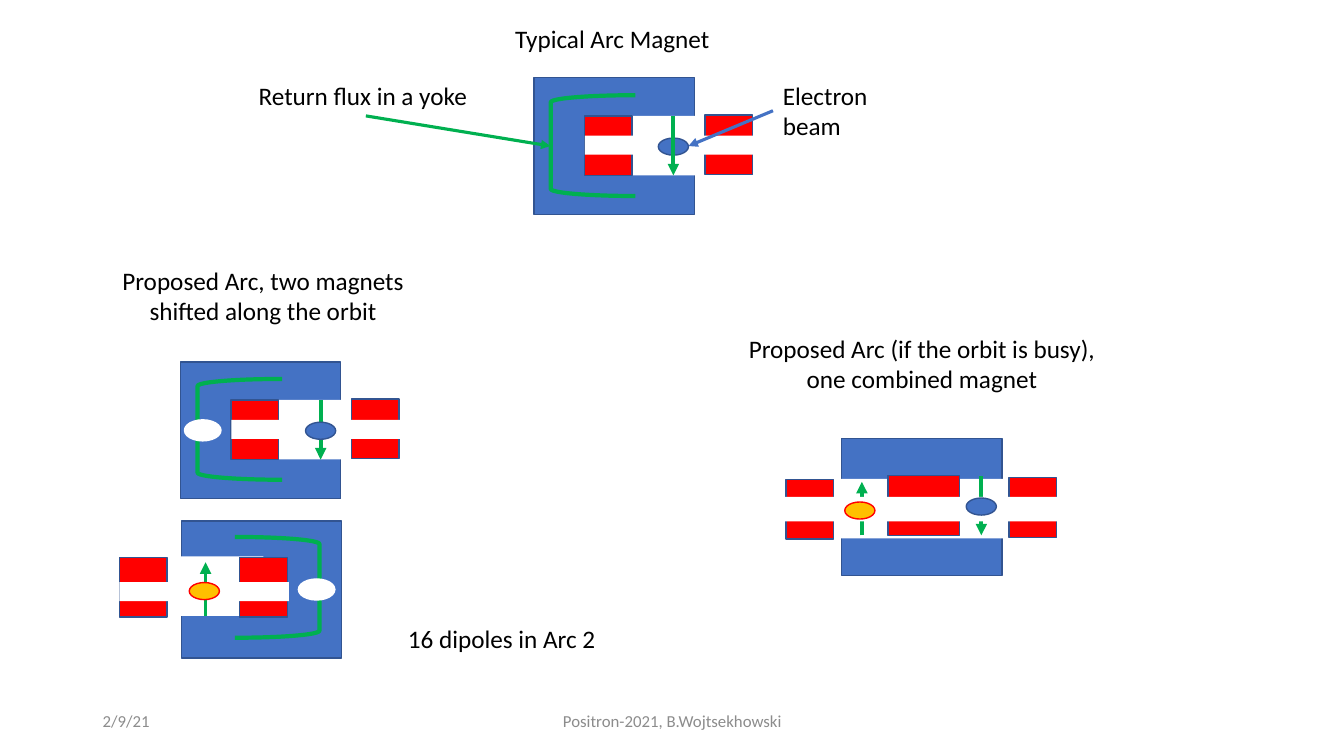
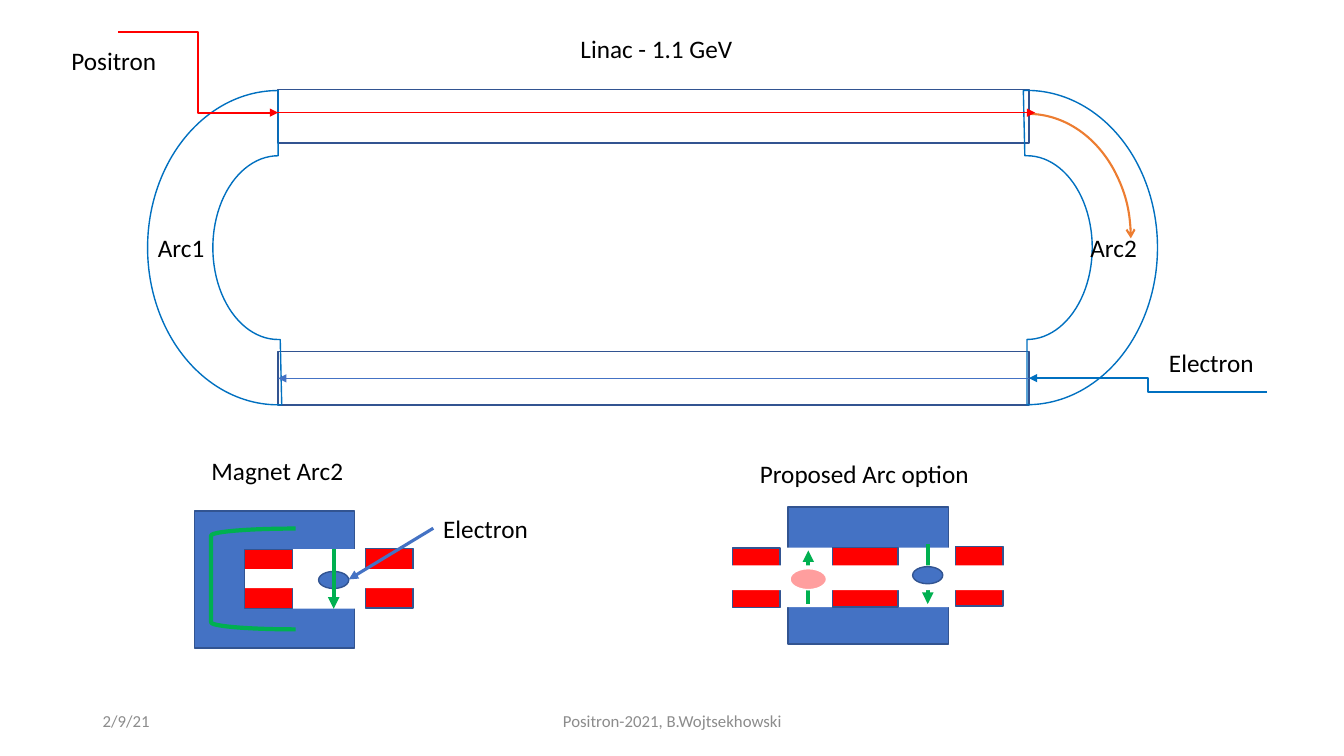
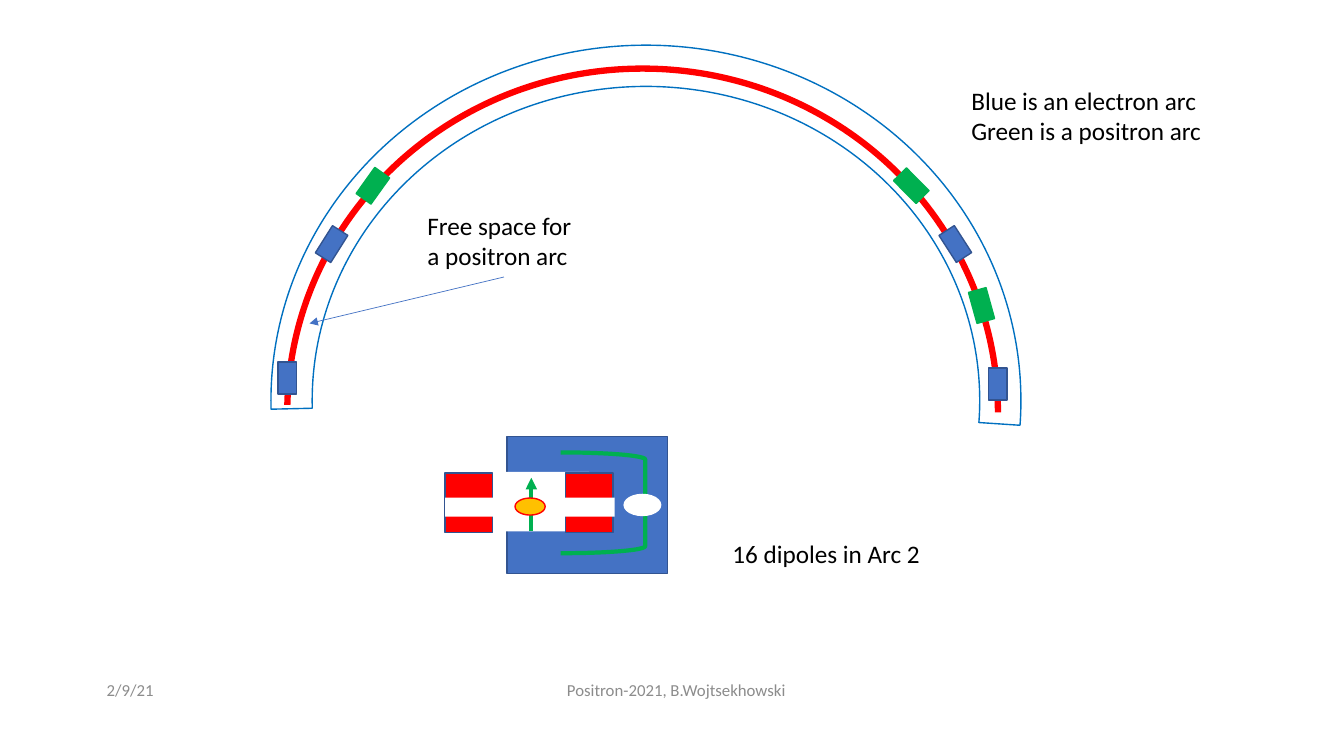
import pptx
import pptx.dml.color
import pptx.enum.shapes
import pptx.enum.text
import pptx.oxml.ns
import pptx.util
from lxml import etree

Cm = pptx.util.Cm
Pt = pptx.util.Pt
qn = pptx.oxml.ns.qn
MSO = pptx.enum.shapes.MSO_SHAPE
LINK = pptx.enum.shapes.MSO_CONNECTOR
LEFT = pptx.enum.text.PP_ALIGN.LEFT
CENTER = pptx.enum.text.PP_ALIGN.CENTER

FONT = "Calibri"
COLORS = {
    "blue": "4472C4",
    "navy": "325491",
    "pipe": "0070C0",
    "red": "FF0000",
    "green": "00B050",
    "gold": "FFC000",
    "orange": "ED7D31",
    "white": "FFFFFF",
    "black": "000000",
    "gray": "8C8C8C",
}
RGB = {name: pptx.dml.color.RGBColor.from_string(c) for name, c in COLORS.items()}


def stroke(sp, color, width, tail=None):
    if color:
        sp.line.color.rgb = RGB[color]
        sp.line.width = Pt(width)
    else:
        sp.line.fill.background()
    spPr = sp._element.spPr
    if tail:
        etree.SubElement(spPr.find(qn("a:ln")), qn("a:tailEnd"), type=tail)
    etree.SubElement(spPr, qn("a:effectLst"))
    return sp


def draw(s, geometry, x, y, w, h, fill, line, width=1, rot=0, adj=(), tail=None):
    sp = s.shapes.add_shape(geometry, Cm(x), Cm(y), Cm(w), Cm(h))
    sp.rotation = rot
    for i, value in enumerate(adj):
        sp.adjustments[i] = value
    if fill:
        sp.fill.solid()
        sp.fill.fore_color.rgb = RGB[fill]
    else:
        sp.fill.background()
    return stroke(sp, line, width, tail)


prs = pptx.Presentation()
prs.slide_width = Cm(33.87)
prs.slide_height = Cm(19.05)
slides = [prs.slides.add_slide(prs.slide_layouts[6]) for _ in range(3)]
magnets_slide, ring_slide, arc_slide = slides

PARTS = {
    "yoke": (MSO.RECTANGLE, 4.04, 3.45, "blue", "navy"),
    "gap": (MSO.RECTANGLE, 3.76, 1.5, "white", None),
    "wide gap": (MSO.RECTANGLE, 5.03, 1.5, "white", None),
    "coil": (MSO.RECTANGLE, 1.2, 1.5, "red", "navy"),
    "wide core": (MSO.RECTANGLE, 1.8, 1.5, "red", "navy"),
    "core": (MSO.RECTANGLE, 1.65, 1.5, "red", "navy"),
    "slit": (MSO.RECTANGLE, 4.27, 0.48, "white", None),
    "long slit": (MSO.RECTANGLE, 7.06, 0.62, "white", None),
    "electron": (MSO.OVAL, 0.76, 0.43, "blue", "navy"),
    "positron": (MSO.OVAL, 0.76, 0.43, "gold", "red"),
    "faint positron": (MSO.OVAL, 0.92, 0.53, "red", "white"),
    "hole": (MSO.OVAL, 0.92, 0.53, "white", "white"),
    "return": (MSO.LEFT_BRACKET, 2.13, 2.54, None, "green", 3),
    "mirrored return": (MSO.LEFT_BRACKET, 2.13, 2.54, None, "green", 3, 180),
}
FLUX = {"flux down": 1.5, "flux up": -1.35}

c_body = [("yoke", 0, 0), ("gap", 1.27, 0.96), ("coil", 1.27, 0.96),
          ("coil", 4.31, 0.94), ("slit", 1.28, 1.46)]
combined_ends = [("coil", -1.4, 1.03), ("coil", 4.22, 0.99), ("flux down", 3.52, 0.94),
                 ("flux up", 0.51, 2.44), ("long slit", -1.47, 1.47), ("electron", 3.14, 1.5)]
MAGNETS = {
    "typical": c_body + [("electron", 3.13, 1.52), ("flux down", 3.51, 0.96),
                         ("return", 0.42, 0.44)],
    "shifted electron": c_body + [("flux down", 3.53, 0.96), ("return", 0.43, 0.43),
                                  ("hole", 0.1, 1.46), ("electron", 3.15, 1.52)],
    "shifted positron": [("yoke", 0, 0), ("gap", -1.69, 0.89), ("coil", 1.47, 0.92),
                         ("coil", -1.56, 0.92), ("slit", -1.56, 1.54), ("flux up", 0.61, 2.39),
                         ("mirrored return", 1.35, 0.4), ("positron", 0.2, 1.55),
                         ("hole", 2.95, 1.46)],
    "combined": [("yoke", 0, 0), ("wide gap", -0.1, 1.02), ("wide core", 1.17, 0.94)]
                + combined_ends + [("positron", 0.08, 1.6)],
    "combined option": [("yoke", 0, 0), ("wide gap", -0.1, 1.02), ("core", 1.12, 1.02)]
                       + combined_ends + [("faint positron", 0.05, 1.55)],
}
magnet_places = [
    (magnets_slide, "typical", 13.46, 1.96),
    (magnets_slide, "shifted electron", 4.55, 9.12),
    (magnets_slide, "shifted positron", 4.57, 13.13),
    (magnets_slide, "combined", 21.21, 11.05),
    (ring_slide, "typical", 4.9, 12.88),
    (ring_slide, "combined option", 19.86, 12.78),
    (arc_slide, "shifted positron", 12.78, 11),
]
for s, magnet, left, top in magnet_places:
    for part, dx, dy in MAGNETS[magnet]:
        x, y = left + dx, top + dy
        if part in FLUX:
            flux = s.shapes.add_connector(LINK.STRAIGHT, Cm(x), Cm(y), Cm(x), Cm(y + FLUX[part]))
            stroke(flux, "green", 2.75, "triangle")
            continue
        geometry, w, h, *look = PARTS[part]
        sp = draw(s, geometry, x, y, w, h, *look)
        if part == "faint positron":
            color = sp._element.spPr.find(qn("a:solidFill"))[0]
            etree.SubElement(color, qn("a:alpha"), val="38000")

linac, return_leg = [draw(ring_slide, MSO.RECTANGLE, 7.01, y, 18.92, 1.35, None, "navy")
                     for y in (2.26, 8.86)]
for x, rot in ((21.92, 90), (3.05, 270)):
    draw(ring_slide, MSO.BLOCK_ARC, x, 2.95, 7.92, 6.58, None, "pipe", 1, rot, (107.208, 0, 0.25))
draw(ring_slide, MSO.ARC, 23.32, 2.87, 5.18, 6.27, None, "orange", 1.5, 0, (162, 0.033), "arrow")

draw(arc_slide, MSO.BLOCK_ARC, 6.83, 1.14, 18.9, 17.91, None, "pipe", 1, 0,
     (107.208, 2.266, 0.058))
draw(arc_slide, MSO.ARC, 7.24, 1.73, 17.91, 17.32, None, "red", 4.5, 0, (108.711, 0.005))
dipoles = [
    (24.74, 9.45, 90, "blue", "navy"),
    (6.83, 9.3, 90, "blue", "navy"),
    (23.67, 5.92, 57.2, "blue", "navy"),
    (7.95, 5.92, 122.3, "blue", "navy"),
    (8.99, 4.45, 125.6, "green", "green"),
    (24.33, 7.47, 74.5, "green", "green"),
    (22.56, 4.45, 45.1, "green", "green"),
]
for x, y, rot, fill, line in dipoles:
    draw(arc_slide, MSO.RECTANGLE, x, y, 0.81, 0.46, fill, line, 1, rot)

arrows = [
    (magnets_slide, LINK.STRAIGHT, 9.22, 2.92, 13.87, 3.68, "green", 2.25),
    (magnets_slide, LINK.STRAIGHT, 19.48, 2.79, 17.35, 3.68, "blue", 2.25),
    (ring_slide, LINK.ELBOW, 2.97, 0.81, 7.01, 2.84, "red", 1.5),
    (ring_slide, LINK.STRAIGHT, 6.86, 2.84, 26.09, 2.84, "red", 0.5),
    (ring_slide, LINK.ELBOW, 31.93, 9.88, 25.93, 9.53, "pipe", 1.5),
    (ring_slide, LINK.STRAIGHT, 10.92, 13.31, 8.79, 14.6, "blue", 2.25),
    (arc_slide, LINK.STRAIGHT, 12.7, 6.98, 7.8, 8.15, "blue", 0.5),
]
for s, kind, x1, y1, x2, y2, color, width in arrows:
    arrow = s.shapes.add_connector(kind, Cm(x1), Cm(y1), Cm(x2), Cm(y2))
    stroke(arrow, color, width, "triangle")

beam = ring_slide.shapes.add_connector(LINK.STRAIGHT, Cm(25.93), Cm(9.53), Cm(7.01), Cm(9.53))
beam.begin_connect(return_leg, 3)
beam.end_connect(return_leg, 1)
stroke(beam, "blue", 0.5, "triangle")

labels = [
    (magnets_slide, ["Proposed Arc, two magnets", "shifted along the orbit"], 2.64, 6.55, 7.98, CENTER),
    (magnets_slide, ["Typical Arc Magnet"], 12.73, 0.46, 5.61, LEFT),
    (magnets_slide, ["Electron", "beam"], 19.48, 1.9, 2.67, LEFT),
    (magnets_slide, ["Return flux in a yoke"], 6.27, 1.9, 5.82, LEFT),
    (magnets_slide, ["Proposed Arc (if the orbit is busy),", "one combined magnet"],
     18.42, 8.28, 9.63, CENTER),
    (magnets_slide, ["16 dipoles in Arc 2"], 10.03, 15.57, 5.28, LEFT),
    (ring_slide, ["Arc1"], 3.73, 5.72, 1.7, LEFT),
    (ring_slide, ["Arc2"], 27.23, 5.72, 1.7, LEFT),
    (ring_slide, ["Electron"], 29.21, 8.64, 2.82, LEFT),
    (ring_slide, ["Positron"], 1.55, 1.02, 2.67, LEFT),
    (ring_slide, ["Linac - 1.1 GeV"], 14.38, 0.71, 4.39, LEFT),
    (ring_slide, ["Proposed Arc option"], 18.9, 11.43, 5.84, LEFT),
    (ring_slide, ["Magnet Arc2"], 5.08, 11.35, 3.86, LEFT),
    (ring_slide, ["Electron"], 10.92, 12.8, 2.67, LEFT),
    (arc_slide, ["Free space for", "a positron arc"], 10.52, 5.18, 4.34, LEFT),
    (arc_slide, ["Blue is an electron arc", "Green is a positron arc"], 24.23, 2.03, 6.38, LEFT),
    (arc_slide, ["16 dipoles in Arc 2"], 18.21, 13.44, 5.28, LEFT),
]
texts = [(*label, 18, "black") for label in labels]
for s, x, y in zip(slides, (2.34, 2.34, 2.44), (17.65, 17.65, 16.87)):
    texts.append((s, ["2/9/21"], x, y, 7.62, LEFT, 12, "gray"))
    texts.append((s, ["Positron-2021, B.Wojtsekhowski"], x + 8.89, y, 11.43, CENTER, 12, "gray"))

for s, lines, x, y, w, align, size, color in texts:
    h = 1.02 if len(lines) == 1 else 1.8
    tf = s.shapes.add_textbox(Cm(x), Cm(y), Cm(w), Cm(h)).text_frame
    if color == "gray":
        tf.word_wrap = True
        tf.vertical_anchor = pptx.enum.text.MSO_ANCHOR.MIDDLE
    else:
        tf.word_wrap = False
        tf.auto_size = pptx.enum.text.MSO_AUTO_SIZE.SHAPE_TO_FIT_TEXT
    tf.text = "\n".join(lines)
    for p in tf.paragraphs:
        p.alignment = align
        p.font.name = FONT
        p.font.size = Pt(size)
        p.font.color.rgb = RGB[color]

prs.save("out.pptx")
